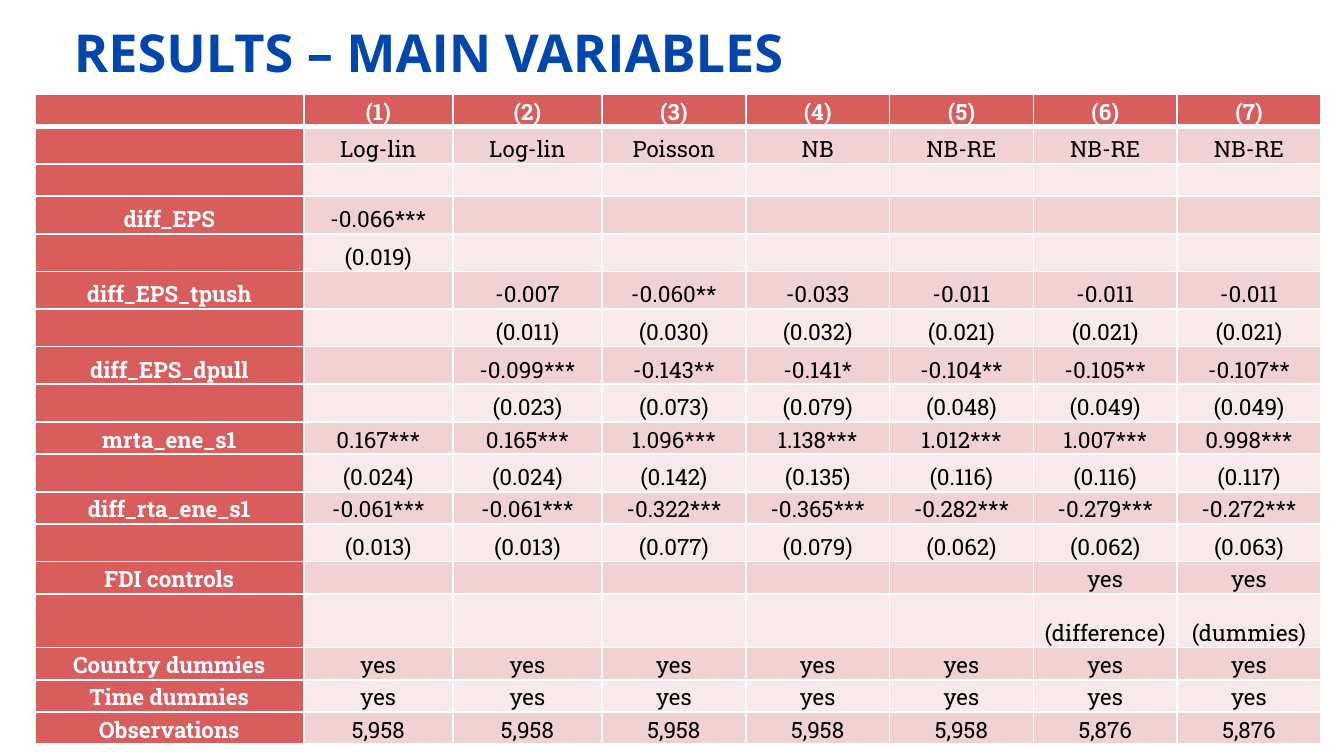
from lxml.etree import SubElement
from pptx import Presentation
from pptx.dml.color import RGBColor
from pptx.enum.text import MSO_ANCHOR, PP_ALIGN
from pptx.oxml.ns import qn
from pptx.util import Inches, Pt

SLIDE_WIDTH = 10
SLIDE_HEIGHT = SLIDE_WIDTH * 9 / 16
COLORS = {
    "title": "0046AD",
    "header": "DA5D5D",
    "dark_band": "F1D2D2",
    "light_band": "F8EAEA",
    "white": "FFFFFF",
    "black": "000000",
}
TITLE_FONT, TABLE_FONT = "Open Sans", "Roboto Slab"
TABLE_SIZE = 12

TITLE = "RESULTS – MAIN VARIABLES"
COLUMN_WIDTHS = [2] + [1.11] * 2 + [1.07] * 5
SHORT, MEDIUM, TALL = 0.24, 0.28, 0.4

# Row height, row label, values of models (1) to (7)
ROWS = [
    (SHORT, "", ["(1)", "(2)", "(3)", "(4)", "(5)", "(6)", "(7)"]),
    (MEDIUM, "", ["Log-lin", "Log-lin", "Poisson", "NB", "NB-RE", "NB-RE", "NB-RE"]),
    (SHORT, "", [""] * 7),
    (MEDIUM, "diff_EPS", ["-0.066***"] + [""] * 6),
    (MEDIUM, "", ["(0.019)"] + [""] * 6),
    (MEDIUM, "diff_EPS_tpush",
     ["", "-0.007", "-0.060**", "-0.033", "-0.011", "-0.011", "-0.011"]),
    (MEDIUM, "",
     ["", "(0.011)", "(0.030)", "(0.032)", "(0.021)", "(0.021)", "(0.021)"]),
    (MEDIUM, "diff_EPS_dpull",
     ["", "-0.099***", "-0.143**", "-0.141*", "-0.104**", "-0.105**", "-0.107**"]),
    (MEDIUM, "",
     ["", "(0.023)", "(0.073)", "(0.079)", "(0.048)", "(0.049)", "(0.049)"]),
    (SHORT, "mrta_ene_s1",
     ["0.167***", "0.165***", "1.096***", "1.138***", "1.012***", "1.007***", "0.998***"]),
    (MEDIUM, "",
     ["(0.024)", "(0.024)", "(0.142)", "(0.135)", "(0.116)", "(0.116)", "(0.117)"]),
    (SHORT, "diff_rta_ene_s1",
     ["-0.061***", "-0.061***", "-0.322***", "-0.365***", "-0.282***", "-0.279***",
      "-0.272***"]),
    (MEDIUM, "",
     ["(0.013)", "(0.013)", "(0.077)", "(0.079)", "(0.062)", "(0.062)", "(0.063)"]),
    (SHORT, "FDI controls", [""] * 5 + ["yes"] * 2),
    (TALL, "", [""] * 5 + ["(difference)", "(dummies)"]),
    (SHORT, "Country dummies", ["yes"] * 7),
    (SHORT, "Time dummies", ["yes"] * 7),
    (SHORT, "Observations", ["5,958"] * 5 + ["5,876"] * 2),
]


def write_text(frame, text, *, font, size, color, bold=False,
               align=PP_ALIGN.LEFT, line_spacing=None, space_before=None):
    paragraph = frame.paragraphs[0]
    paragraph.alignment = align
    paragraph.line_spacing = line_spacing
    paragraph.space_before = space_before
    if not text:
        # Keeps an empty cell from growing to the default text size
        SubElement(paragraph._p, qn("a:endParaRPr"), sz=str(size * 100))
        return
    run = paragraph.add_run()
    run.text = text
    run.font.name = font
    run.font.size = Pt(size)
    run.font.bold = bold
    run.font.color.rgb = RGBColor.from_string(COLORS[color])


def set_borders(cell, top, bottom):
    """Draw white cell borders; top and bottom are widths in points."""
    properties = cell._tc.get_or_add_tcPr()
    for side, width in (("L", 1), ("R", 1), ("T", top), ("B", bottom)):
        line = SubElement(properties, qn(f"a:ln{side}"), w=str(Pt(width)))
        fill = SubElement(line, qn("a:solidFill"))
        SubElement(fill, qn("a:srgbClr"), val=COLORS["white"])


def add_title(slide):
    box = slide.shapes.add_textbox(Inches(0.55), Inches(0.15), Inches(8.29), Inches(0.47))
    frame = box.text_frame
    frame.word_wrap = True
    frame.vertical_anchor = MSO_ANCHOR.BOTTOM
    frame.margin_left = frame.margin_right = frame.margin_top = frame.margin_bottom = 0
    write_text(frame, TITLE, font=TITLE_FONT, size=28, color="title", bold=True,
               line_spacing=Pt(35))


def add_results_table(slide):
    table = slide.shapes.add_table(
        len(ROWS), len(COLUMN_WIDTHS), Inches(0.26), Inches(0.7),
        Inches(sum(COLUMN_WIDTHS)), Inches(sum(row[0] for row in ROWS))).table
    for column, width in zip(table.columns, COLUMN_WIDTHS):
        column.width = Inches(width)

    last_row = len(ROWS) - 1
    for row_index, (height, label, values) in enumerate(ROWS):
        table.rows[row_index].height = Inches(height)
        band = "dark_band" if row_index % 2 else "light_band"
        for column_index, text in enumerate([label] + values):
            is_header = row_index == 0 or column_index == 0
            cell = table.cell(row_index, column_index)
            cell.vertical_anchor = MSO_ANCHOR.BOTTOM
            cell.margin_left = cell.margin_right = Inches(0.02)
            cell.margin_top = cell.margin_bottom = 0
            set_borders(cell, top=3 if row_index == 1 else 1,
                        bottom=3 if row_index == 0 else 1)
            cell.fill.solid()
            cell.fill.fore_color.rgb = RGBColor.from_string(
                COLORS["header" if is_header else band])
            write_text(cell.text_frame, text, font=TABLE_FONT, size=TABLE_SIZE,
                       color="white" if is_header else "black", bold=is_header,
                       align=PP_ALIGN.CENTER, line_spacing=1.07,
                       space_before=Pt(6) if row_index == last_row else None)


def main():
    presentation = Presentation()
    presentation.slide_width = Inches(SLIDE_WIDTH)
    presentation.slide_height = Inches(SLIDE_HEIGHT)
    slide = presentation.slides.add_slide(presentation.slide_layouts[6])
    add_title(slide)
    add_results_table(slide)
    presentation.save("out.pptx")


if __name__ == "__main__":
    main()
